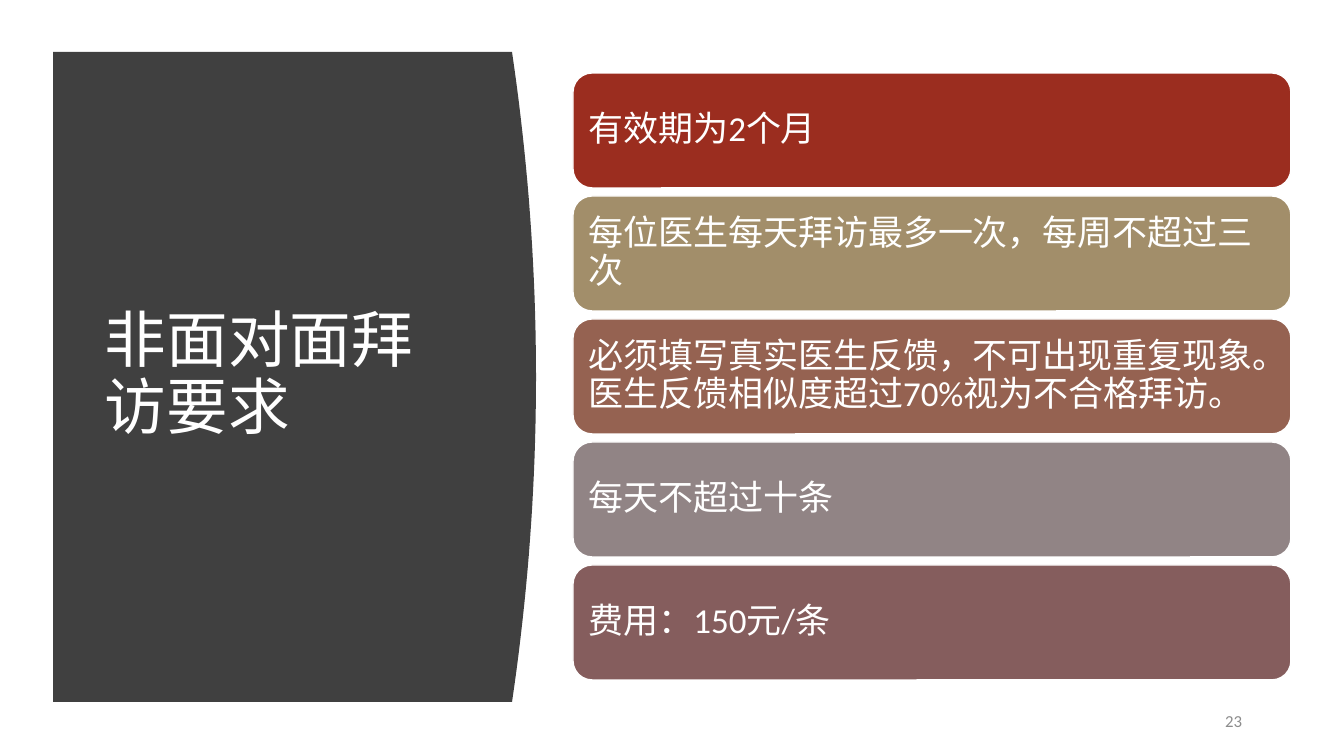
from pptx import Presentation
from pptx.dml.color import RGBColor
from pptx.enum.shapes import MSO_SHAPE as Preset
from pptx.enum.text import MSO_ANCHOR as Anchor, PP_ALIGN as Align
from pptx.util import Emu, Pt

# Content
TITLE = "非面对面拜访要求"
PAGE_NUMBER = "23"
RULES = [
    ("有效期为2个月", "red"),
    ("每位医生每天拜访最多一次，每周不超过三次", "sand"),
    ("必须填写真实医生反馈，不可出现重复现象。医生反馈相似度超过70%视为不合格拜访。", "clay"),
    ("每天不超过十条", "grey"),
    ("费用：150元/条", "plum"),
]
COLORS = {
    "red": "9B2D1F", "sand": "A28E6A", "clay": "956251", "grey": "918485",
    "plum": "855D5D", "panel": "404040", "white": "FFFFFF", "number": "8C8C8C",
}
FONT = "Calibri"

# Layout in px
SLIDE_SIZE = (1344, 756)
PANEL_LEFT, PANEL_TOP, PANEL_EDGE, PANEL_BOTTOM = 53, 52, 512, 702
PANEL_BULGE, CURVE_STEPS = 24, 40
TITLE_BOX = (95, 112, 377, 528)
NUMBER_BOX = (1182, 701, 70, 40)
CARD_LEFT, CARD_TOP, CARD_WIDTH, CARD_HEIGHT, CARD_GAP = 573, 73, 718, 115, 8
CARD_INSET = 10


def px(length):
    return Emu(round(length * 914400 / 100.8))


def color(name):
    return RGBColor.from_string(COLORS[name])


def write(shape, text, size, color_name, align=Align.LEFT, spacing=1.0):
    frame = shape.text_frame
    frame.word_wrap = True
    frame.vertical_anchor = Anchor.MIDDLE
    paragraph = frame.paragraphs[0]
    paragraph.alignment = align
    paragraph.line_spacing = spacing
    run = paragraph.add_run()
    run.text = text
    run.font.name = FONT
    run.font.size = Pt(size)
    run.font.color.rgb = color(color_name)


def add_text(slide, box, *style, **options):
    write(slide.shapes.add_textbox(*map(px, box)), *style, **options)


def add_panel(slide):
    # The right edge is a parabola, widest at mid-height
    curve = []
    for step in range(CURVE_STEPS + 1):
        share = step / CURVE_STEPS
        x = PANEL_EDGE + PANEL_BULGE * 4 * share * (1 - share)
        y = PANEL_TOP + (PANEL_BOTTOM - PANEL_TOP) * share
        curve.append((px(x), px(y)))
    builder = slide.shapes.build_freeform(px(PANEL_LEFT), px(PANEL_TOP))
    builder.add_line_segments(curve + [(px(PANEL_LEFT), px(PANEL_BOTTOM))], close=True)
    panel = builder.convert_to_shape()
    panel.shadow.inherit = False
    panel.fill.solid()
    panel.fill.fore_color.rgb = color("panel")
    panel.line.fill.background()


def add_card(slide, index, text, fill):
    top = CARD_TOP + index * (CARD_HEIGHT + CARD_GAP)
    box = (CARD_LEFT, top, CARD_WIDTH, CARD_HEIGHT)
    card = slide.shapes.add_shape(Preset.ROUNDED_RECTANGLE, *map(px, box))
    card.shadow.inherit = False
    card.fill.solid()
    card.fill.fore_color.rgb = color(fill)
    card.line.color.rgb = color("white")
    card.line.width = Pt(1)
    frame = card.text_frame
    frame.margin_left = frame.margin_right = px(CARD_INSET)
    frame.margin_top = frame.margin_bottom = px(CARD_INSET)
    write(card, text, 25, "white", spacing=0.9)


def main():
    presentation = Presentation()
    presentation.slide_width, presentation.slide_height = map(px, SLIDE_SIZE)
    slide = presentation.slides.add_slide(presentation.slide_layouts[6])

    # Title panel and page number
    add_panel(slide)
    add_text(slide, TITLE_BOX, TITLE, 44, "white", spacing=0.9)
    add_text(slide, NUMBER_BOX, PAGE_NUMBER, 12, "number", align=Align.RIGHT)

    # Rule cards
    for index, (text, fill) in enumerate(RULES):
        add_card(slide, index, text, fill)

    presentation.save("out.pptx")


if __name__ == "__main__":
    main()
